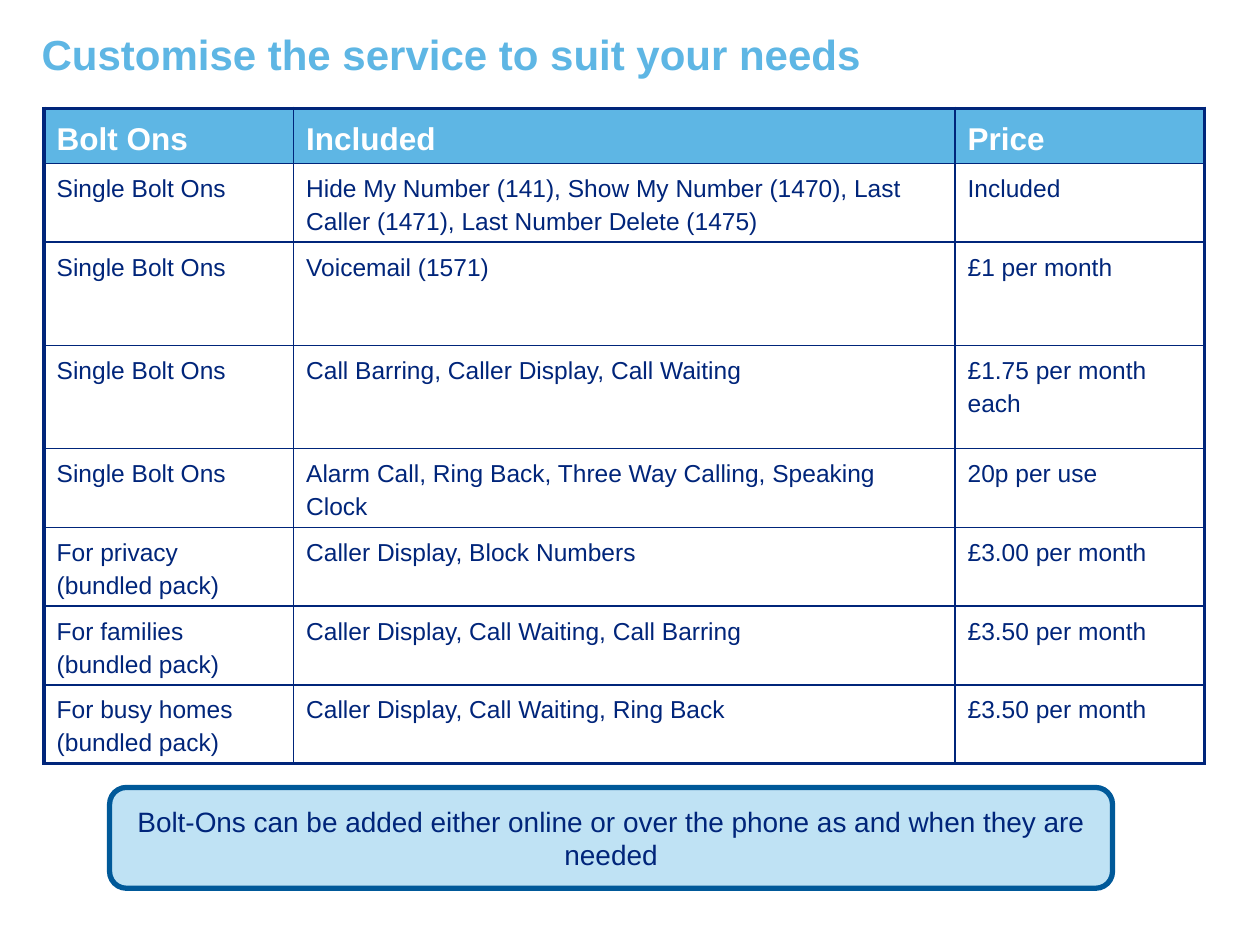
import pptx
import pptx.util
import pptx.dml.color
import pptx.enum.shapes
import pptx.enum.text
import pptx.oxml
import lxml.etree

Inches = pptx.util.Inches
Pt = pptx.util.Pt
NAVY = "00257A"
SKY = "5EB6E4"


def paint(item, shade):
    if hasattr(item, "solid"):
        item.solid()
        item.fore_color.rgb = pptx.dml.color.RGBColor.from_string(shade)
    else:
        item.color.rgb = pptx.dml.color.RGBColor.from_string(shade)


def write(para, text, size, shade, bold=False):
    for i, line in enumerate(text.split("\n")):
        if i:
            para.add_line_break()
        run = para.add_run()
        run.text = line
        run.font.name = "Arial"
        run.font.size = Pt(size)
        run.font.bold = bold
        paint(run.font, shade)


deck = pptx.Presentation()
deck.slide_width = Inches(10)
deck.slide_height = Inches(7.5)
slide = deck.slides.add_slide(deck.slide_layouts[5])

title = slide.shapes.title
title.left, title.top = Inches(0.33), Inches(0.23)
title.width, title.height = Inches(8.73), Inches(0.69)
frame = title.text_frame
frame.margin_left = frame.margin_right = frame.margin_top = frame.margin_bottom = 0
frame.vertical_anchor = pptx.enum.text.MSO_ANCHOR.TOP
frame.word_wrap = True
frame.paragraphs[0].alignment = pptx.enum.text.PP_ALIGN.LEFT
write(frame.paragraphs[0], "Customise the service to suit your needs", 24, SKY, True)

rows = [
    ("Bolt Ons", "Included", "Price"),
    ("Single Bolt Ons",
     "Hide My Number (141), Show My Number (1470), Last Caller (1471), Last Number Delete (1475)",
     "Included"),
    ("Single Bolt Ons", "Voicemail (1571)", "£1 per month"),
    ("Single Bolt Ons", "Call Barring, Caller Display, Call Waiting", "£1.75 per month each"),
    ("Single Bolt Ons", "Alarm Call, Ring Back, Three Way Calling, Speaking Clock", "20p per use"),
    ("For privacy\n(bundled pack)", "Caller Display, Block Numbers", "£3.00 per month"),
    ("For families\n(bundled pack)", "Caller Display, Call Waiting, Call Barring", "£3.50 per month"),
    ("For busy homes\n(bundled pack)", "Caller Display, Call Waiting, Ring Back", "£3.50 per month"),
]
wide = [1.98, 5.25, 1.98]
high = [0.4, 0.56, 0.82, 0.82, 0.58, 0.58, 0.58, 0.56]
grid = slide.shapes.add_table(
    len(rows), len(wide), Inches(0.35), Inches(0.86), Inches(sum(wide)), Inches(sum(high))
).table
for col, width in zip(grid.columns, wide):
    col.width = Inches(width)
for row, height in zip(grid.rows, high):
    row.height = Inches(height)

for r, texts in enumerate(rows):
    for c, text in enumerate(texts):
        cell = grid.cell(r, c)
        para = cell.text_frame.paragraphs[0]
        para.line_spacing = 1.2
        if r == 0:
            write(para, text, 18, "FFFFFF", True)
        else:
            write(para, text, 14, NAVY)
        props = cell._tc.get_or_add_tcPr()
        edges = {"lnL": c == 0, "lnR": c == len(wide) - 1,
                 "lnT": r == 0, "lnB": r == len(rows) - 1}
        for tag, outer in edges.items():
            line = lxml.etree.SubElement(props, pptx.oxml.ns.qn("a:" + tag))
            line.set("w", str(Pt(2.25 if outer else 1)))
            fill = lxml.etree.SubElement(line, pptx.oxml.ns.qn("a:solidFill"))
            lxml.etree.SubElement(fill, pptx.oxml.ns.qn("a:srgbClr")).set("val", NAVY)
        if r == 0:
            paint(cell.fill, SKY)
        else:
            cell.fill.background()

note = slide.shapes.add_shape(
    pptx.enum.shapes.MSO_SHAPE.ROUNDED_RECTANGLE,
    Inches(0.87), Inches(6.25), Inches(7.96), Inches(0.8))
note.shadow.inherit = False
paint(note.fill, "BFE2F4")
paint(note.line, "005999")
note.line.width = Pt(3)
frame = note.text_frame
frame.word_wrap = True
frame.vertical_anchor = pptx.enum.text.MSO_ANCHOR.MIDDLE
para = frame.paragraphs[0]
para.alignment = pptx.enum.text.PP_ALIGN.CENTER
para.space_after = Pt(12)
write(para, "Bolt-Ons can be added either online or over the phone as and when they are needed", 16, NAVY)

deck.save("out.pptx")
